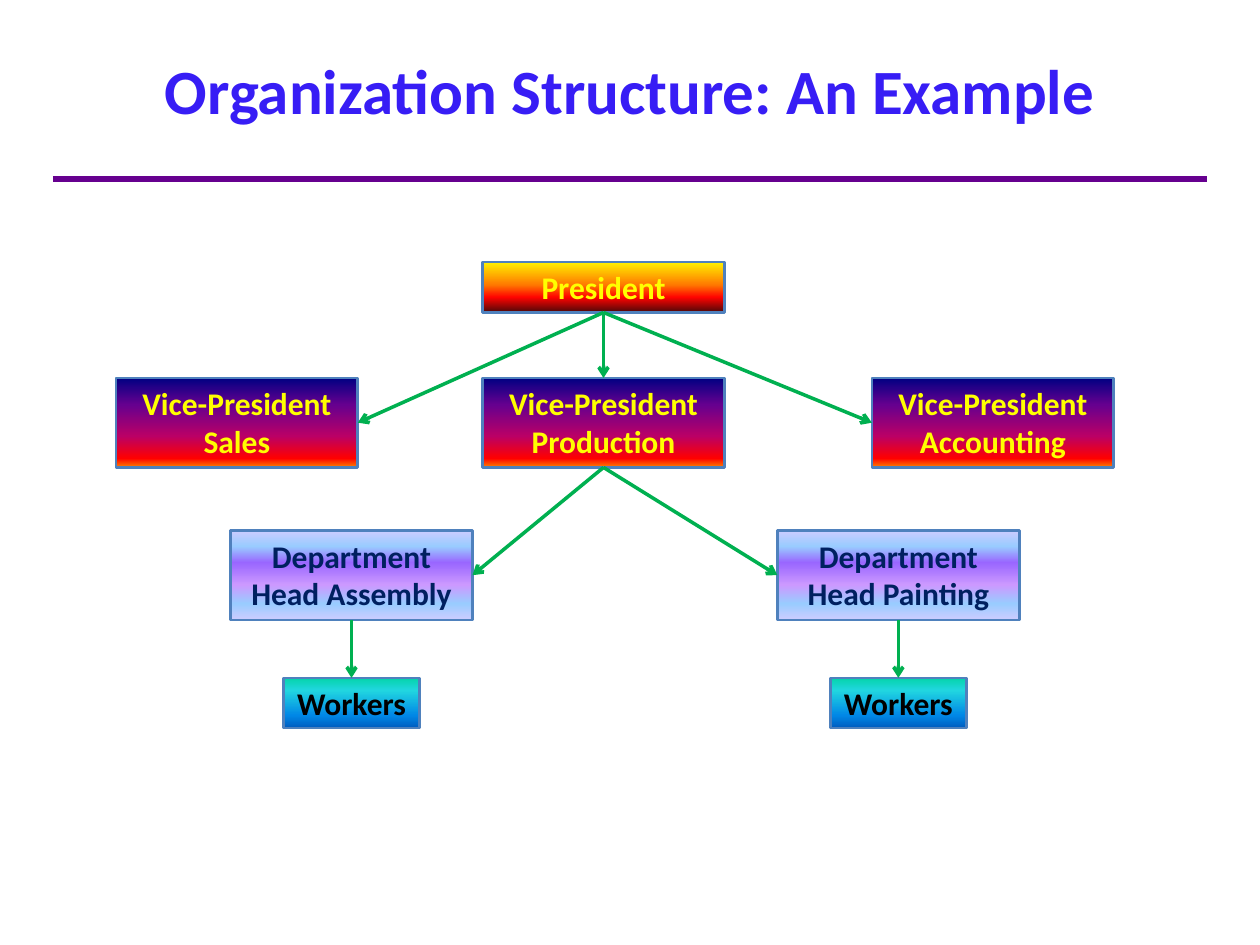
import lxml.etree
import pptx
import pptx.dml.color
import pptx.enum.shapes
import pptx.enum.text
import pptx.oxml.ns
import pptx.util

Inches = pptx.util.Inches
RGB = pptx.dml.color.RGBColor
qn = pptx.oxml.ns.qn

TITLE_BLUE = RGB(0x37, 0x1D, 0xF5)
RULE_PURPLE = RGB(0x66, 0x00, 0x8F)
BORDER_BLUE = RGB(0x4F, 0x81, 0xBD)
ARROW_GREEN = RGB(0x00, 0xB0, 0x50)
YELLOW = RGB(0xFF, 0xFF, 0x00)
NAVY = RGB(0x00, 0x20, 0x60)
BLACK = RGB(0x00, 0x00, 0x00)

# Gradient stops from top to bottom: percent and colour
FIRE = [(0, RGB(0xFF, 0xF2, 0x00)), (45, RGB(0xFF, 0x7A, 0x00)),
        (70, RGB(0xFF, 0x03, 0x00)), (100, RGB(0x4D, 0x08, 0x08))]
SUNSET = [(0, RGB(0x00, 0x00, 0x82)), (30, RGB(0x66, 0x00, 0x8F)),
          (65, RGB(0xBA, 0x00, 0x66)), (90, RGB(0xFF, 0x00, 0x00)),
          (100, RGB(0xFF, 0x82, 0x00))]
LILAC = [(0, RGB(0xCC, 0xCC, 0xFF)), (18, RGB(0x99, 0xCC, 0xFF)),
         (36, RGB(0x99, 0x66, 0xFF)), (61, RGB(0xCC, 0x99, 0xFF)),
         (82, RGB(0x99, 0xCC, 0xFF)), (100, RGB(0xCC, 0xCC, 0xFF))]
OCEAN = [(0, RGB(0x03, 0xD4, 0xA8)), (25, RGB(0x21, 0xD6, 0xE0)),
         (75, RGB(0x00, 0x87, 0xE6)), (100, RGB(0x00, 0x5C, 0xBF))]

# Each level of the hierarchy: top, width, height, gradient, text colour
PRESIDENT = (2.08, 1.92, 0.40, FIRE, YELLOW)
VICE_PRESIDENT = (3.00, 1.92, 0.71, SUNSET, YELLOW)
DEPARTMENT = (4.21, 1.92, 0.71, LILAC, NAVY)
WORKERS = (5.38, 1.08, 0.40, OCEAN, BLACK)

TOP, LEFT, BOTTOM, RIGHT = range(4)


def write_text(shape, lines, size, color, anchor):
    frame = shape.text_frame
    frame.word_wrap = True
    frame.vertical_anchor = anchor
    frame.text = "\n".join(lines)
    font_format = {"name": "Calibri", "size": pptx.util.Pt(size), "bold": True}
    for paragraph in frame.paragraphs:
        paragraph.alignment = pptx.enum.text.PP_ALIGN.CENTER
        font = paragraph.runs[0].font
        for attribute, value in font_format.items():
            setattr(font, attribute, value)
        font.color.rgb = color


def fill_gradient(shape, stops):
    shape.fill.gradient()
    shape.fill.gradient_angle = 270
    stop_list = shape._element.spPr.find(qn("a:gradFill")).find(qn("a:gsLst"))
    for default_stop in list(stop_list):
        stop_list.remove(default_stop)
    for percent, color in stops:
        stop = lxml.etree.SubElement(stop_list, qn("a:gs"), pos=str(percent * 1000))
        lxml.etree.SubElement(stop, qn("a:srgbClr"), val=str(color))


def add_title(slide, text):
    title = slide.shapes.add_textbox(Inches(0.5), Inches(0.08), Inches(9), Inches(1.25))
    write_text(title, [text], 36, TITLE_BLUE, pptx.enum.text.MSO_ANCHOR.MIDDLE)


def add_position(slide, level, center, *lines):
    top, width, height, stops, text_color = level
    position = slide.shapes.add_shape(
        pptx.enum.shapes.MSO_SHAPE.RECTANGLE,
        Inches(center - width / 2), Inches(top), Inches(width), Inches(height))
    position.shadow.inherit = False
    fill_gradient(position, stops)
    position.line.color.rgb = BORDER_BLUE
    position.line.width = pptx.util.Pt(1.5)
    write_text(position, lines, 18, text_color, pptx.enum.text.MSO_ANCHOR.TOP)
    position.text_frame.auto_size = pptx.enum.text.MSO_AUTO_SIZE.SHAPE_TO_FIT_TEXT
    return position


def add_line(slide, color, width, start=(0, 0), end=(0, 0)):
    line = slide.shapes.add_connector(
        pptx.enum.shapes.MSO_CONNECTOR.STRAIGHT,
        *(Inches(value) for value in (*start, *end)))
    line.line.color.rgb = color
    line.line.width = pptx.util.Pt(width)
    lxml.etree.SubElement(line._element.spPr, qn("a:effectLst"))
    return line


def add_arrow(slide, superior, subordinate, side):
    arrow = add_line(slide, ARROW_GREEN, 2)
    arrow.begin_connect(superior, BOTTOM)
    arrow.end_connect(subordinate, side)
    outline = arrow._element.spPr.find(qn("a:ln"))
    lxml.etree.SubElement(outline, qn("a:tailEnd"), type="arrow")


def main():
    presentation = pptx.Presentation()
    presentation.slide_width = Inches(10)
    presentation.slide_height = Inches(7.5)
    slide = presentation.slides.add_slide(presentation.slide_layouts[6])

    # Heading and rule
    add_line(slide, RULE_PURPLE, 3, (0.42, 1.42), (9.58, 1.42))
    add_title(slide, "Organization Structure: An Example")

    # President and vice-presidents
    president = add_position(slide, PRESIDENT, 4.79, "President")
    vice_presidents = {}
    for area, center, side in (("Sales", 1.88, RIGHT), ("Production", 4.79, TOP),
                               ("Accounting", 7.88, LEFT)):
        vice_presidents[area] = add_position(
            slide, VICE_PRESIDENT, center, "Vice-President", area)
        add_arrow(slide, president, vice_presidents[area], side)

    # Production departments and their workers
    for area, center, side in (("Assembly", 2.79, RIGHT), ("Painting", 7.13, LEFT)):
        department = add_position(slide, DEPARTMENT, center, f"Department Head {area}")
        workers = add_position(slide, WORKERS, center, "Workers")
        add_arrow(slide, vice_presidents["Production"], department, side)
        add_arrow(slide, department, workers, TOP)

    presentation.save("out.pptx")


if __name__ == "__main__":
    main()
